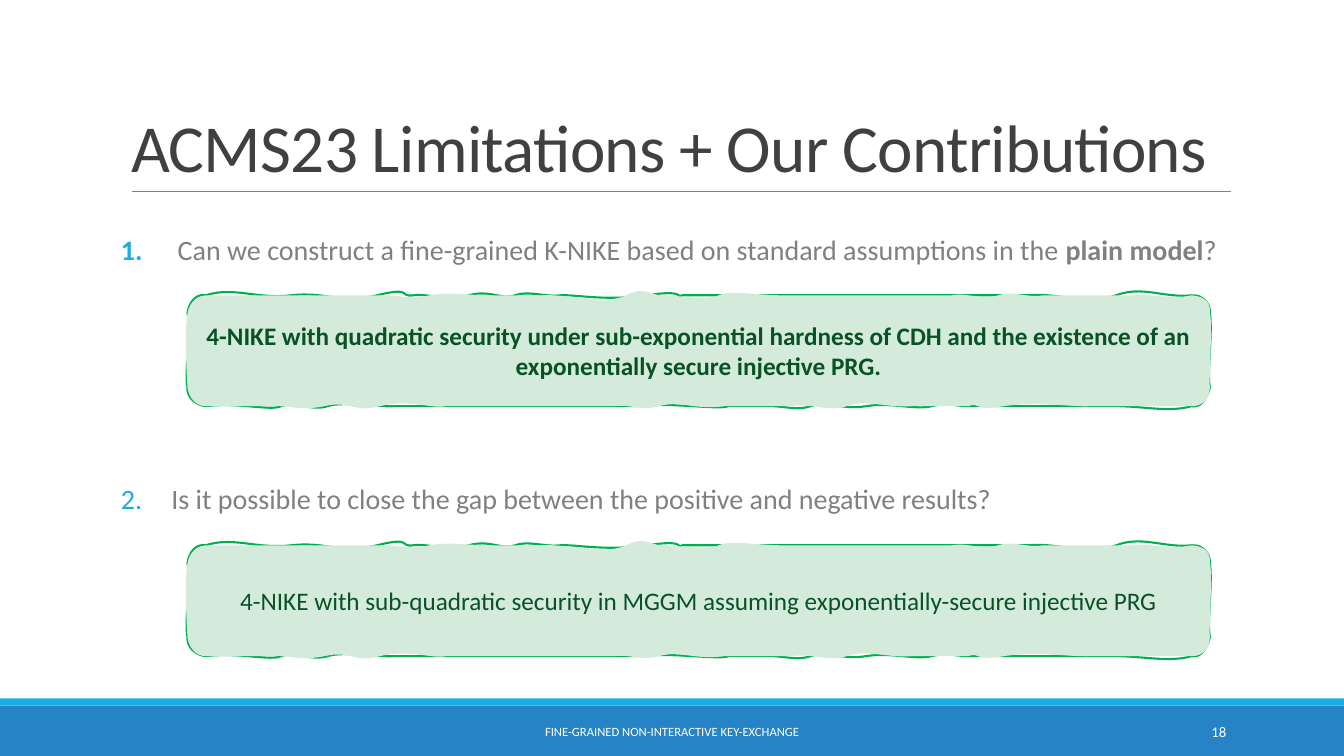
from copy import deepcopy

from lxml.etree import Element, SubElement
from pptx import Presentation
from pptx.dml.color import RGBColor
from pptx.enum.shapes import MSO_CONNECTOR, MSO_SHAPE
from pptx.enum.text import MSO_ANCHOR, MSO_AUTO_SIZE, PP_ALIGN
from pptx.oxml.ns import qn
from pptx.util import Inches, Pt

FONT = "Calibri"
WHITE = RGBColor(0xFF, 0xFF, 0xFF)
TITLE_GRAY = RGBColor(0x40, 0x40, 0x40)
GRAY = RGBColor(0x80, 0x80, 0x80)
BLUE = RGBColor(0x26, 0x83, 0xC6)
SKY = RGBColor(0x1C, 0xAD, 0xE4)
PALE_GREEN = RGBColor(0xD4, 0xEB, 0xDB)
GREEN = RGBColor(0x00, 0xB0, 0x50)
DARK_GREEN = RGBColor(0x09, 0x52, 0x26)

TITLE = "ACMS23 Limitations + Our Contributions"
QUESTIONS = [  # runs of (text, bold)
    [(" ", True),
     ("Can we construct a fine-grained K-NIKE based on standard assumptions in the ", False),
     ("plain model", True), ("?", False)],
    [("Is it possible to close the gap between the positive and negative results?", False)],
]
ANSWERS = [  # text, bold
    ("4-NIKE with quadratic security under sub-exponential hardness of CDH "
     "and the existence of an exponentially secure injective PRG.", True),
    ("4-NIKE with sub-quadratic security in MGGM assuming "
     "exponentially-secure injective PRG", False),
]
FOOTER = "FINE-GRAINED NON-INTERACTIVE KEY-EXCHANGE"
SLIDE_NUMBER = "18"

SLIDE_WIDTH, SLIDE_HEIGHT = 13.33, 7.5
CONTENT_LEFT, CONTENT_WIDTH = 1.2, 11
FOOTER_TOP, FOOTER_HEIGHT = 7.06, 0.4
ANSWER_TOP, ANSWER_PITCH = 2.93, 2.48
ANSWER_DEPTH = 110

# Wavy box, in hundredths of an inch: x from the slide's left, y from the box's top.
# Corners and sides: control 1 (x, y), control 2 (x, y), end (x, y).
# Edges: control 1 (x, offset), control 2 (x, offset), end x; a lone x is a straight run.
START = (186, 18)
STROKE_WAVE = dict(
    corner=[(187, 9, 193, -2, 204, 0)],
    top=[(232, -9, 254, 4, 289), (324, -4, 337, 9, 374), (410, -9, 395, 2, 410),
         (424, -2, 444, 6, 465), (486, -6, 498, 5, 511), (523, -5, 542, 2, 556),
         (571, -1, 600, 6, 641), (682, -6, 669, 3, 677), (1022,),
         (1044, -3, 1080, 10, 1107), (1133, -10, 1155, 3, 1182)],
    right=[(1193, -1, 1201, 9, 1200, 18), (1203, 36, 1197, 78, 1200, 91),
           (1198, 102, 1191, 112, 1182, 110)],
    bottom=[(1157, 7, 1133, -1, 1097), (960,), (947, 0, 941, -4, 924),
            (908, 4, 883, -4, 859), (835, 4, 818, -6, 804), (790, 5, 776, -1, 758),
            (722,), (715, 4, 663, -4, 638), (390,), (376, 1, 340, -5, 325),
            (310, 5, 290, -5, 279), (268, 5, 238, -4, 204)],
    left=[(194, 109, 185, 101, 186, 91), (183, 80, 189, 28, 186, 18)],
)
FILL_WAVE = dict(
    corner=[(188, 6, 196, 1, 204, 0)],
    top=[(380,), (394, -1, 406, 5, 426), (446, -4, 473, 1, 491), (537,),
         (558, -2, 603, 10, 621), (640, -10, 648, 1, 657), (666, -1, 700, 6, 713),
         (726, -6, 751, 1, 788), (944,), (958, -3, 975, 5, 990),
         (1004, -5, 1020, 3, 1035), (1126,), (1135, -3, 1158, 5, 1182)],
    right=[(1194, 1, 1201, 6, 1200, 18), (1203, 27, 1199, 82, 1200, 91),
           (1200, 103, 1193, 110, 1182, 110)],
    bottom=[(1081,), (1063, 1, 1028, -5, 996), (964, 5, 974, -4, 960), (905,),
            (880, 2, 858, -7, 840), (821, 6, 808, -3, 784), (719,),
            (688, 4, 674, -6, 654), (634, 5, 628, -2, 608), (442,),
            (431, 3, 404, -7, 377), (350, 7, 348, -6, 322), (296, 5, 292, -1, 266), (204,)],
    left=[(194, 110, 187, 101, 186, 91), (185, 77, 183, 34, 186, 18)],
)


def wave_curves(wave):
    """Join the sides of a wave into (control points, end point) pairs."""
    def along(edge, y):
        for *controls, x in edge:
            yield [value + y * (i % 2) for i, value in enumerate(controls)] + [x, y]

    sides = [*wave["corner"], *along(wave["top"], 0), *wave["right"],
             *along(wave["bottom"], ANSWER_DEPTH), *wave["left"]]
    return [(list(zip(side[:-2:2], side[1:-2:2])), tuple(side[-2:])) for side in sides]


def bend_lines(shape, curves):
    """Turn each straight segment that has control points into a Bézier curve."""
    lines = list(shape._element.iter(qn("a:lnTo")))
    for line, (controls, _) in zip(lines, curves):
        if controls:
            line.tag = qn("a:cubicBezTo")
            for index, (x, y) in enumerate(controls):
                line.insert(index, Element(qn("a:pt"), x=str(x - START[0]), y=str(y)))


def split_stroke_and_fill(shape):
    """Make the first contour stroke only and the second fill only."""
    stroke = next(shape._element.iter(qn("a:path")))
    fill = deepcopy(stroke)
    stroke.addnext(fill)
    second = [i for i, node in enumerate(stroke) if node.tag == qn("a:moveTo")][1]
    for node in list(stroke)[second:]:
        stroke.remove(node)
    for node in list(fill)[:second]:
        fill.remove(node)
    stroke.set("fill", "none")
    fill.set("stroke", "0")


def format_runs(paragraph, size, color, bold=False):
    for run in paragraph.runs:
        run.font.name, run.font.size, run.font.bold = FONT, Pt(size), bold
        run.font.color.rgb = color


def add_bar(slide, top, height, color):
    bar = slide.shapes.add_shape(MSO_SHAPE.RECTANGLE, 0, Inches(top),
                                 Inches(SLIDE_WIDTH), Inches(height))
    bar.shadow.inherit = False
    bar.fill.solid()
    bar.fill.fore_color.rgb = color
    bar.line.fill.background()


def add_footer_text(slide, left, width, text, size, alignment):
    box = slide.shapes.add_textbox(Inches(left), Inches(FOOTER_TOP),
                                   Inches(width), Inches(FOOTER_HEIGHT))
    frame = box.text_frame
    frame.word_wrap, frame.vertical_anchor = True, MSO_ANCHOR.MIDDLE
    frame.text = text
    frame.paragraphs[0].alignment = alignment
    format_runs(frame.paragraphs[0], size, WHITE)


def add_title(slide):
    title = slide.shapes.title
    title.left, title.top = Inches(CONTENT_LEFT), Inches(0.31)
    title.width, title.height = Inches(CONTENT_WIDTH), Inches(1.59)
    frame = title.text_frame
    frame.text = TITLE
    frame.word_wrap, frame.auto_size = True, MSO_AUTO_SIZE.NONE
    frame.vertical_anchor = MSO_ANCHOR.BOTTOM
    paragraph = frame.paragraphs[0]
    paragraph.alignment, paragraph.line_spacing = PP_ALIGN.LEFT, 0.85
    format_runs(paragraph, 48, TITLE_GRAY)
    paragraph.runs[0].font._element.set("spc", "-50")
    rule = slide.shapes.add_connector(MSO_CONNECTOR.STRAIGHT, Inches(1.31), Inches(1.9),
                                      Inches(12.21), Inches(1.9))
    rule.line.color.rgb, rule.line.width = GRAY, Pt(0.5)
    SubElement(rule._element.spPr, qn("a:effectLst"))


def add_questions(slide):
    box = slide.shapes.add_textbox(Inches(CONTENT_LEFT), Inches(2.29),
                                   Inches(CONTENT_WIDTH), Inches(4.45))
    frame = box.text_frame
    frame.word_wrap = True
    frame.margin_left = frame.margin_right = 0
    for index, runs in enumerate(QUESTIONS):
        paragraph = frame.add_paragraph() if index else frame.paragraphs[0]
        paragraph.line_spacing, paragraph.space_after = 0.9, Pt(2)
        paragraph.space_before = Pt(154.6 if index else 0)
        for text, _ in runs:
            paragraph.add_run().text = text
        format_runs(paragraph, 20, GRAY)
        for run, (_, bold) in zip(paragraph.runs, runs):
            run.font.bold = bold
        properties = paragraph._p.get_or_add_pPr()
        properties.set("marL", str(Inches(0.5)))
        properties.set("indent", str(-Inches(0.5)))
        SubElement(SubElement(properties, qn("a:buClr")), qn("a:srgbClr"), val=str(SKY))
        SubElement(properties, qn("a:buFont"), typeface="+mj-lt")
        SubElement(properties, qn("a:buAutoNum"), type="arabicPeriod")


def add_answer(slide, top, text, bold):
    waves = [wave_curves(wave) for wave in (STROKE_WAVE, FILL_WAVE)]
    builder = slide.shapes.build_freeform(*START, scale=Inches(0.01))
    for index, curves in enumerate(waves):
        if index:
            builder.move_to(*START)
        builder.add_line_segments([end for _, end in curves], close=True)
    box = builder.convert_to_shape(0, Inches(top))
    bend_lines(box, waves[0] + waves[1])
    split_stroke_and_fill(box)
    box.shadow.inherit = False
    box.fill.solid()
    box.fill.fore_color.rgb = PALE_GREEN
    box.line.color.rgb, box.line.width = GREEN, Pt(1.5)
    frame = box.text_frame
    frame.word_wrap, frame.vertical_anchor = True, MSO_ANCHOR.MIDDLE
    frame.text = text
    frame.paragraphs[0].alignment = PP_ALIGN.CENTER
    format_runs(frame.paragraphs[0], 18, DARK_GREEN, bold)


def main():
    presentation = Presentation()
    presentation.slide_width = Inches(SLIDE_WIDTH)
    presentation.slide_height = Inches(SLIDE_HEIGHT)
    slide = presentation.slides.add_slide(presentation.slide_layouts[5])
    add_bar(slide, 7, 0.5, BLUE)
    add_bar(slide, 6.93, 0.07, SKY)
    add_footer_text(slide, 4.03, 5.27, FOOTER, 9, PP_ALIGN.CENTER)
    add_footer_text(slide, 10.83, 1.43, SLIDE_NUMBER, 10.5, PP_ALIGN.RIGHT)
    add_title(slide)
    add_questions(slide)
    for index, (text, bold) in enumerate(ANSWERS):
        add_answer(slide, ANSWER_TOP + index * ANSWER_PITCH, text, bold)
    presentation.save("out.pptx")


if __name__ == "__main__":
    main()
